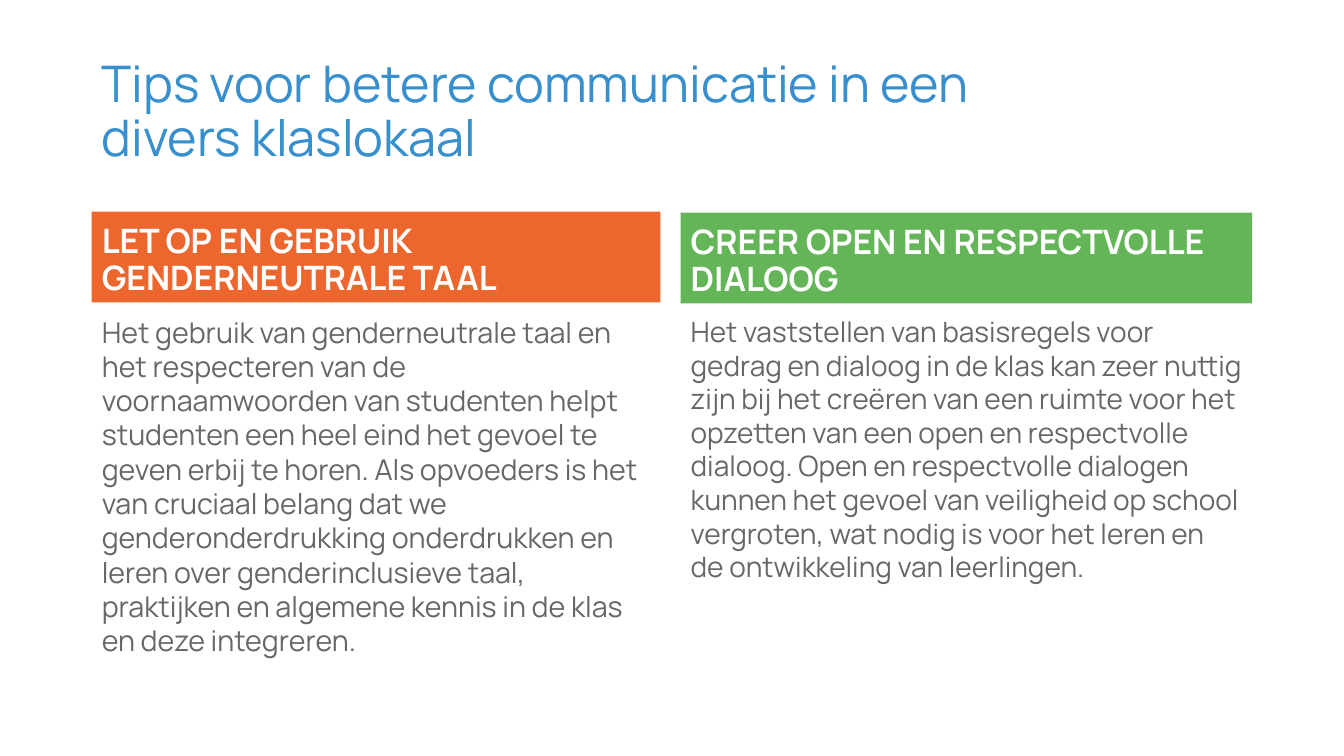
"""Builds a slide with two tips for better communication in a diverse classroom."""
from dataclasses import dataclass

import lxml.etree
import pptx
import pptx.dml.color
import pptx.enum.text
import pptx.oxml.ns
import pptx.shapes.placeholder
import pptx.util

Inches = pptx.util.Inches
Anchor = pptx.enum.text.MSO_ANCHOR
Placeholder = pptx.shapes.placeholder.SlidePlaceholder


@dataclass(frozen=True)
class Theme:
    font: str = "Manrope"
    title_color: str = "378FCD"
    heading_color: str = "FFFFFF"
    body_color: str = "676766"
    orange: str = "EC662D"
    green: str = "64B558"
    title_size: float = 36
    heading_size: float = 24
    tight_spacing: float = 0.9


@dataclass(frozen=True)
class Tip:
    heading: str
    advice: str
    fill: str
    left: float
    heading_top: float
    width: float
    advice_size: float
    heading_idx: int
    advice_idx: int


THEME = Theme()
TITLE = "Tips voor betere communicatie in een divers klaslokaal"
TIPS = (
    Tip(
        "LET OP EN GEBRUIK GENDERNEUTRALE TAAL",
        "Het gebruik van genderneutrale taal en het respecteren van de "
        "voornaamwoorden van studenten helpt studenten een heel eind het gevoel te "
        "geven erbij te horen. Als opvoeders is het van cruciaal belang dat we "
        "genderonderdrukking onderdrukken en leren over genderinclusieve taal, "
        "praktijken en algemene kennis in de klas en deze integreren.",
        THEME.orange, 0.91, 2.1, 5.64, 20.4, 1, 2,
    ),
    Tip(
        "CREER OPEN EN RESPECTVOLLE DIALOOG",
        "Het vaststellen van basisregels voor gedrag en dialoog in de klas kan zeer "
        "nuttig zijn bij het creëren van een ruimte voor het opzetten van een open en "
        "respectvolle dialoog. Open en respectvolle dialogen kunnen het gevoel van "
        "veiligheid op school vergroten, wat nodig is voor het leren en de "
        "ontwikkeling van leerlingen.",
        THEME.green, 6.75, 2.11, 5.67, 20, 3, 4,
    ),
)


def place(part: Placeholder, left: float, top: float, width: float, height: float) -> None:
    part.left, part.top = Inches(left), Inches(top)
    part.width, part.height = Inches(width), Inches(height)


def write(part: Placeholder, text: str, *, size: float, color: str, bold: bool = False,
          spacing: float = 1.0, anchor: Anchor = Anchor.TOP) -> None:
    frame = part.text_frame
    frame.word_wrap = True
    frame.auto_size = pptx.enum.text.MSO_AUTO_SIZE.NONE
    frame.vertical_anchor = anchor
    paragraph = frame.paragraphs[0]
    properties = paragraph._p.get_or_add_pPr()
    properties.set("marL", "0")
    properties.set("indent", "0")
    lxml.etree.SubElement(properties, pptx.oxml.ns.qn("a:buNone"))
    paragraph.alignment = pptx.enum.text.PP_ALIGN.LEFT
    paragraph.line_spacing = spacing
    paragraph.space_before = pptx.util.Pt(0)
    run = paragraph.add_run()
    run.text = text
    run.font.name = THEME.font
    run.font.size = pptx.util.Pt(size)
    run.font.bold = bold
    run.font.color.rgb = pptx.dml.color.RGBColor.from_string(color)


def add_tip(slide: pptx.slide.Slide, tip: Tip) -> None:
    parts = {part.placeholder_format.idx: part for part in slide.placeholders}
    heading, advice = parts[tip.heading_idx], parts[tip.advice_idx]
    place(heading, tip.left, tip.heading_top, tip.width, 0.9)
    heading.fill.solid()
    heading.fill.fore_color.rgb = pptx.dml.color.RGBColor.from_string(tip.fill)
    write(heading, tip.heading, size=THEME.heading_size, color=THEME.heading_color,
          bold=True, spacing=THEME.tight_spacing, anchor=Anchor.BOTTOM)
    place(advice, tip.left, 3.07, tip.width, 3.65)
    write(advice, tip.advice, size=tip.advice_size, color=THEME.body_color)


def main() -> None:
    deck = pptx.Presentation()
    deck.slide_width, deck.slide_height = Inches(13.33), Inches(7.5)
    slide = deck.slides.add_slide(deck.slide_layouts.get_by_name("Comparison"))
    title = slide.shapes.title
    place(title, 0.91, 0.4, 9.36, 1.45)
    write(title, TITLE, size=THEME.title_size, color=THEME.title_color,
          spacing=THEME.tight_spacing, anchor=Anchor.MIDDLE)
    for tip in TIPS:
        add_tip(slide, tip)
    deck.save("out.pptx")


if __name__ == "__main__":
    main()
